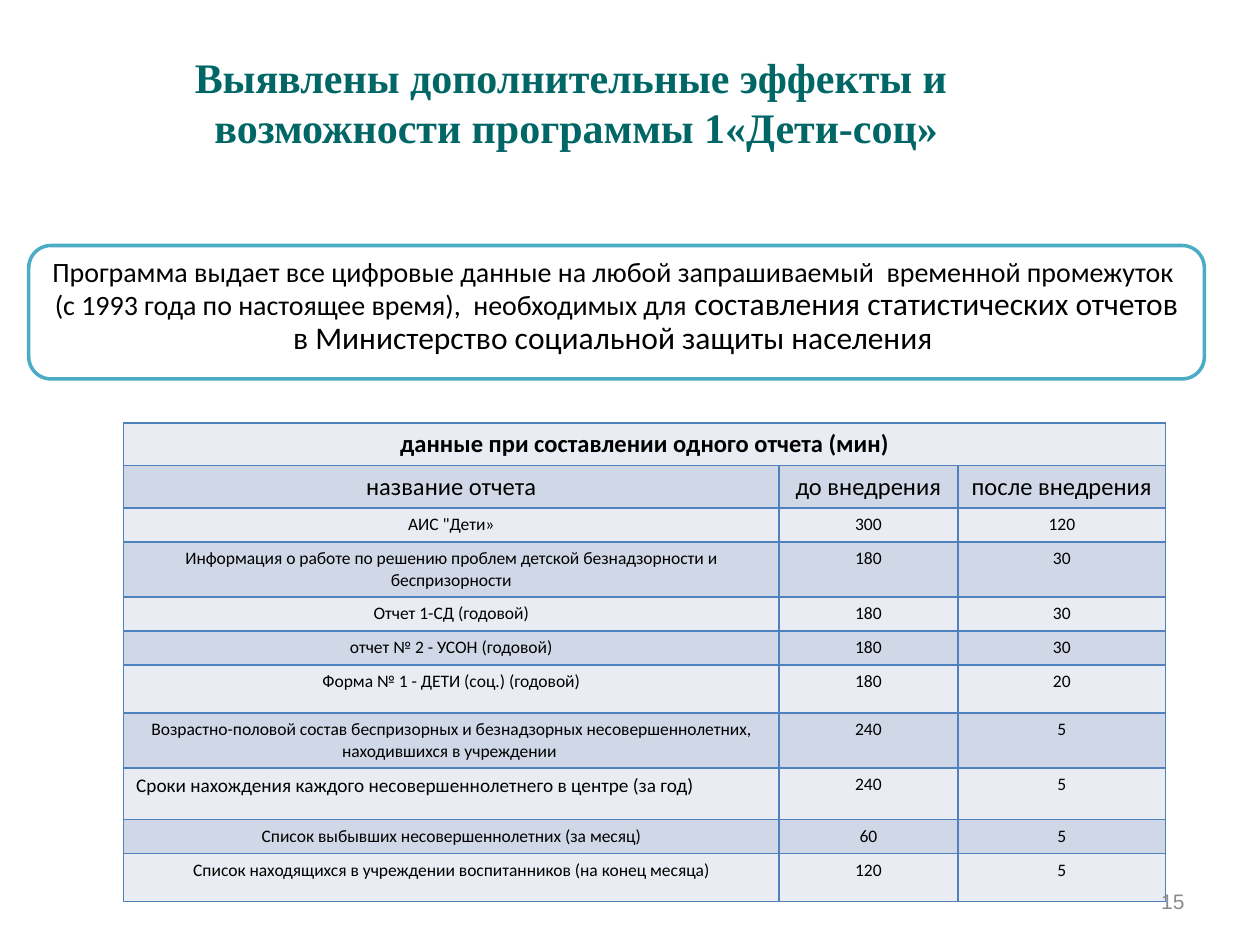
from dataclasses import dataclass

import pptx
import pptx.util
import pptx.dml.color
import pptx.enum.shapes
import pptx.enum.text
import pptx.oxml
import pptx.oxml.ns

Cm, Pt = pptx.util.Cm, pptx.util.Pt
ALIGN, ANCHOR = pptx.enum.text.PP_ALIGN, pptx.enum.text.MSO_ANCHOR


@dataclass(frozen=True)
class Theme:
    title: dict
    intro: dict
    intro_large: dict
    table_title: dict
    table_head: dict
    table_body: dict
    table_large: dict
    number: dict
    white: str = "FFFFFF"
    frame: str = "4BACC6"
    border: str = "4F81BD"
    bands: tuple = ("E9ECF3", "D0D8E7")


def style(name, size, color="000000", bold=False):
    return {"name": name, "size": Pt(size), "bold": bold, "color": color}


THEME = Theme(
    title=style("Times New Roman", 24, "006666", True),
    intro=style("Calibri", 16),
    intro_large=style("Calibri", 18),
    table_title=style("Calibri", 14, bold=True),
    table_head=style("Calibri", 14),
    table_body=style("Calibri", 10),
    table_large=style("Calibri", 11),
    number=style("Arial", 12, "8B8B8B"),
)

INTRO = (
    ("Программа выдает все цифровые данные на любой запрашиваемый  временной "
     "промежуток  (с 1993 года по настоящее время),  необходимых для", THEME.intro),
    (" составления статистических отчетов в Министерство социальной защиты "
     "населения ", THEME.intro_large),
)
COLUMNS = (13.21, 3.61, 4.19)
HEAD = 0.74
# Row height in cm, then the cells
REPORTS = (
    (0.58, "АИС \"Дети»", 300, 120),
    (0.97, "Информация о работе по решению проблем детской безнадзорности и "
           "беспризорности", 180, 30),
    (0.58, "Отчет 1-СД (годовой)", 180, 30),
    (0.58, "отчет № 2 - УСОН (годовой)", 180, 30),
    (0.97, "Форма № 1 - ДЕТИ (соц.) (годовой)", 180, 20),
    (0.97, "Возрастно-половой состав беспризорных и безнадзорных "
           "несовершеннолетних, находившихся в учреждении ", 240, 5),
    (1.04, "Сроки нахождения каждого несовершеннолетнего в центре (за год)", 240, 5),
    (0.58, "Список выбывших несовершеннолетних (за месяц)", 60, 5),
    (0.97, "Список находящихся в учреждении воспитанников (на конец месяца)", 120, 5),
)
LEFT_ALIGNED_REPORT = 6


def rgb(value):
    return pptx.dml.color.RGBColor.from_string(value)


def write(p, runs, align=ALIGN.CENTER):
    """Fill a paragraph with (text, format) runs."""
    p.alignment = align
    for text, fmt in runs:
        r = p.add_run()
        r.text = text
        for key, value in fmt.items():
            if key == "color":
                r.font.color.rgb = rgb(value)
            else:
                setattr(r.font, key, value)


def set_frame(tf, anchor):
    tf.word_wrap = True
    tf.auto_size = pptx.enum.text.MSO_AUTO_SIZE.NONE
    tf.vertical_anchor = anchor


def add_title(s, left, top, width, height):
    sp = s.shapes.title
    sp.left, sp.top, sp.width, sp.height = Cm(left), Cm(top), Cm(width), Cm(height)
    set_frame(sp.text_frame, ANCHOR.TOP)
    text = "Выявлены дополнительные эффекты и  возможности программы 1«Дети-соц»"
    write(sp.text_frame.paragraphs[0], [(text, THEME.title)])


def add_intro(s, left, top, width, height):
    sp = s.shapes.add_shape(pptx.enum.shapes.MSO_SHAPE.ROUNDED_RECTANGLE,
                            Cm(left), Cm(top), Cm(width), Cm(height))
    sp.shadow.inherit = False
    sp.fill.solid()
    sp.fill.fore_color.rgb = rgb(THEME.white)
    sp.line.color.rgb = rgb(THEME.frame)
    sp.line.width = Pt(2)
    set_frame(sp.text_frame, ANCHOR.TOP)
    p = sp.text_frame.paragraphs[0]
    p.line_spacing = 0.9
    p.space_after = Pt(5.6)
    write(p, INTRO)


def format_cell(cell, color):
    tc_pr = cell._tc.get_or_add_tcPr()
    for side in "LRTB":
        tc_pr.append(pptx.oxml.parse_xml(
            f'<a:ln{side} {pptx.oxml.ns.nsdecls("a")} w="{Pt(0.96)}"><a:solidFill>'
            f'<a:srgbClr val="{THEME.border}"/></a:solidFill></a:ln{side}>'))
    cell.fill.solid()
    cell.fill.fore_color.rgb = rgb(color)


def add_reports(s, left, top):
    rows = [(HEAD, "данные при составлении одного отчета (мин)", "", ""),
            (HEAD, "название отчета", "до внедрения", "после внедрения"), *REPORTS]
    table = s.shapes.add_table(len(rows), len(COLUMNS), Cm(left), Cm(top),
                               Cm(sum(COLUMNS)), Cm(sum(row[0] for row in rows))).table
    for column, width in zip(table.columns, COLUMNS):
        column.width = Cm(width)
    for i, (height, *values) in enumerate(rows):
        table.rows[i].height = Cm(height)
        for j, value in enumerate(values):
            cell = table.cell(i, j)
            format_cell(cell, THEME.bands[i % 2])
            fmt, align = THEME.table_body, ALIGN.CENTER
            if i < 2:
                fmt = (THEME.table_title, THEME.table_head)[i]
            elif i - 2 == LEFT_ALIGNED_REPORT and j == 0:
                fmt, align = THEME.table_large, ALIGN.LEFT
            if value != "":
                write(cell.text_frame.paragraphs[0], [(str(value), fmt)], align)
    table.cell(0, 0).merge(table.cell(0, len(COLUMNS) - 1))


def add_number(s, left, top, width, height):
    sp = s.shapes.add_textbox(Cm(left), Cm(top), Cm(width), Cm(height))
    set_frame(sp.text_frame, ANCHOR.MIDDLE)
    write(sp.text_frame.paragraphs[0], [("15", THEME.number)], ALIGN.RIGHT)


def main():
    prs = pptx.Presentation()
    prs.slide_width, prs.slide_height = Cm(25.4), Cm(19.05)
    s = prs.slides.add_slide(prs.slide_layouts.get_by_name("Title Only"))
    add_title(s, 1.91, 0.91, 19.41, 2.29)
    add_intro(s, 0.58, 4.95, 23.7, 2.69)
    add_reports(s, 2.49, 8.53)
    add_number(s, 18.21, 17.65, 5.92, 1.02)
    prs.save("out.pptx")


if __name__ == "__main__":
    main()
